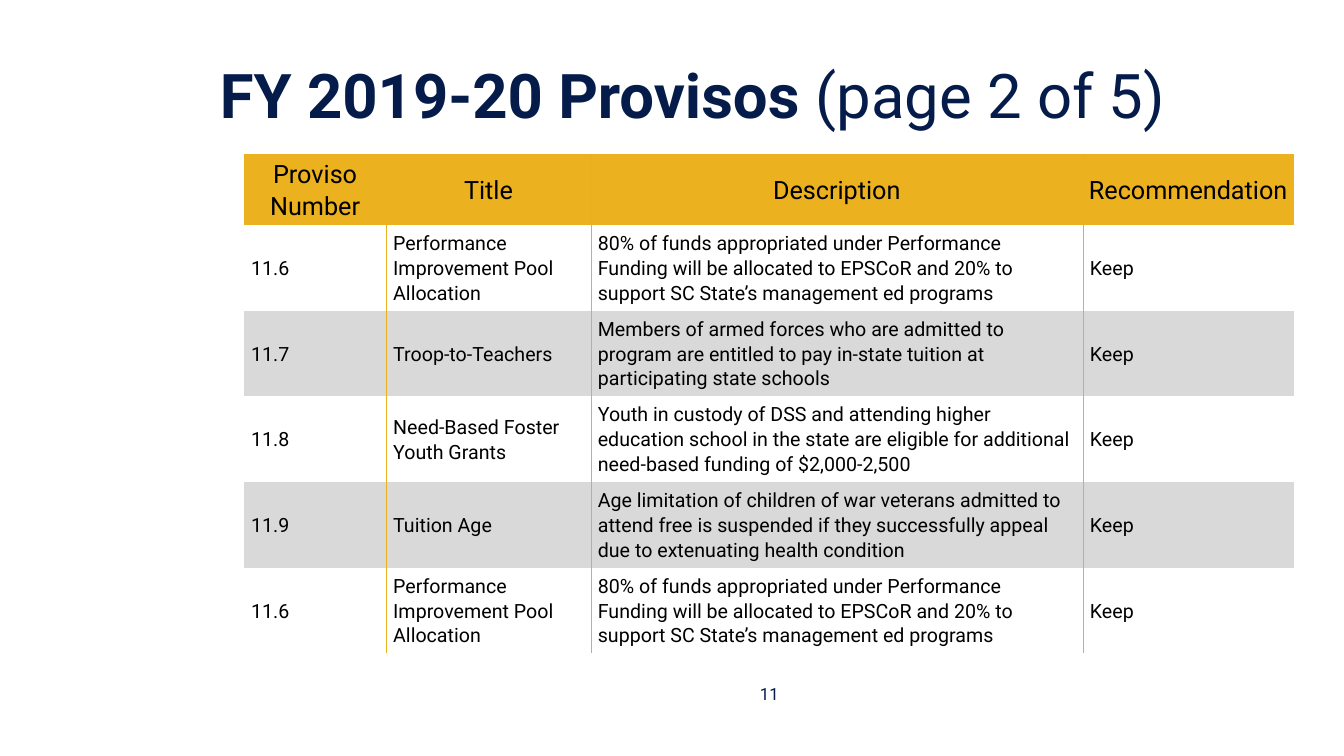
from lxml import etree
from pptx import Presentation
from pptx.dml.color import RGBColor
from pptx.enum.text import MSO_ANCHOR, PP_ALIGN
from pptx.oxml.ns import qn
from pptx.util import Inches, Pt

LEFT, CENTER = PP_ALIGN.LEFT, PP_ALIGN.CENTER
MIDDLE = MSO_ANCHOR.MIDDLE
NAVY = RGBColor(0x05, 0x1C, 0x4B)
GOLD = RGBColor(0xEB, 0xB1, 0x1E)
GREY = RGBColor(0xD9, 0xD9, 0xD9)
RULE_GREY = RGBColor(0xB0, 0xB0, 0xB0)
WHITE = RGBColor(0xFF, 0xFF, 0xFF)
BLACK = RGBColor(0, 0, 0)
FONT = "Roboto"

TITLE = [("FY 2019-20 Provisos ", True), ("(page 2 of 5)", False)]
PAGE_NUMBER = "11"
HEADERS = ("Proviso Number", "Title", "Description", "Recommendation")
POOL = (
    "11.6",
    "Performance Improvement Pool Allocation",
    "80% of funds appropriated under Performance Funding will be allocated to EPSCoR "
    "and 20% to support SC State’s management ed programs",
    "Keep",
)
PROVISOS = [
    POOL,
    (
        "11.7",
        "Troop-to-Teachers",
        "Members of armed forces who are admitted to program are entitled to pay "
        "in-state tuition at participating state schools",
        "Keep",
    ),
    (
        "11.8",
        "Need-Based Foster Youth Grants",
        "Youth in custody of DSS and attending higher education school in the state "
        "are eligible for additional need-based funding of $2,000-2,500",
        "Keep",
    ),
    (
        "11.9",
        "Tuition Age",
        "Age limitation of children of war veterans admitted to attend free is "
        "suspended if they successfully appeal due to extenuating health condition",
        "Keep",
    ),
    POOL,
]
COLUMN_WIDTHS = (1.41, 2.03, 4.88, 2.09)
HEADER_HEIGHT, ROW_HEIGHT = 0.67, 0.85
COLUMN_RULES = ((GOLD, 1), (RULE_GREY, 0.5), (RULE_GREY, 0.5))


def add_text(paragraph, text, size=14, color=BLACK, bold=False, align=LEFT, spacing=None):
    paragraph.alignment = align
    if spacing:
        paragraph.line_spacing = spacing
    run = paragraph.add_run()
    run.text = text
    run.font.name = FONT
    run.font.size = Pt(size)
    run.font.bold = bold
    run.font.color.rgb = color


def set_border(cell, side, rule=None):
    properties = cell._tc.get_or_add_tcPr()
    line = etree.SubElement(properties, qn(f"a:ln{side}"))
    if rule is None:
        etree.SubElement(line, qn("a:noFill"))
        return
    color, width = rule
    line.set("w", str(Pt(width)))
    fill = etree.SubElement(line, qn("a:solidFill"))
    etree.SubElement(fill, qn("a:srgbClr"), val=str(color))


def fill_cell(cell, text, column, is_header, fill):
    side_margin, end_margin = (0.05, 0.03) if is_header else (0.07, 0.04)
    cell.margin_left = cell.margin_right = Inches(side_margin)
    cell.margin_top = cell.margin_bottom = Inches(end_margin)
    cell.vertical_anchor = MIDDLE
    rules = (None, *COLUMN_RULES, None)
    set_border(cell, "L", rules[column])
    set_border(cell, "R", rules[column + 1])
    set_border(cell, "T")
    set_border(cell, "B")
    cell.fill.solid()
    cell.fill.fore_color.rgb = fill
    add_text(
        cell.text_frame.paragraphs[0],
        text,
        size=18 if is_header else 14,
        align=CENTER if is_header else LEFT,
        spacing=1.07,
    )


def add_title(slide):
    title = slide.shapes.title
    title.left, title.top = Inches(2.08), Inches(0.31)
    title.width, title.height = Inches(11.1), Inches(1.25)
    title.text_frame.vertical_anchor = MIDDLE
    for text, bold in TITLE:
        add_text(title.text_frame.paragraphs[0], text, size=44, color=NAVY, bold=bold)


def add_provisos(slide):
    rows = [HEADERS, *PROVISOS]
    height = HEADER_HEIGHT + ROW_HEIGHT * len(PROVISOS)
    frame = slide.shapes.add_table(
        len(rows), len(HEADERS), Inches(2.42), Inches(1.53),
        Inches(sum(COLUMN_WIDTHS)), Inches(height),
    )
    table = frame.table
    table.first_row = table.horz_banding = False
    for column, width in zip(table.columns, COLUMN_WIDTHS):
        column.width = Inches(width)
    for index, texts in enumerate(rows):
        is_header = index == 0
        table.rows[index].height = Inches(HEADER_HEIGHT if is_header else ROW_HEIGHT)
        fill = GOLD if is_header else (GREY, WHITE)[index % 2]
        for column, text in enumerate(texts):
            fill_cell(table.cell(index, column), text, column, is_header, fill)


def add_page_number(slide):
    box = slide.shapes.add_textbox(Inches(7.29), Inches(6.68), Inches(0.68), Inches(0.4))
    box.text_frame.word_wrap = True
    box.text_frame.vertical_anchor = MIDDLE
    add_text(box.text_frame.paragraphs[0], PAGE_NUMBER, size=12, color=NAVY, align=CENTER)


def main():
    presentation = Presentation()
    presentation.slide_width, presentation.slide_height = Inches(13.33), Inches(7.5)
    slide = presentation.slides.add_slide(presentation.slide_layouts[5])
    add_title(slide)
    add_page_number(slide)
    add_provisos(slide)
    presentation.save("out.pptx")


if __name__ == "__main__":
    main()
